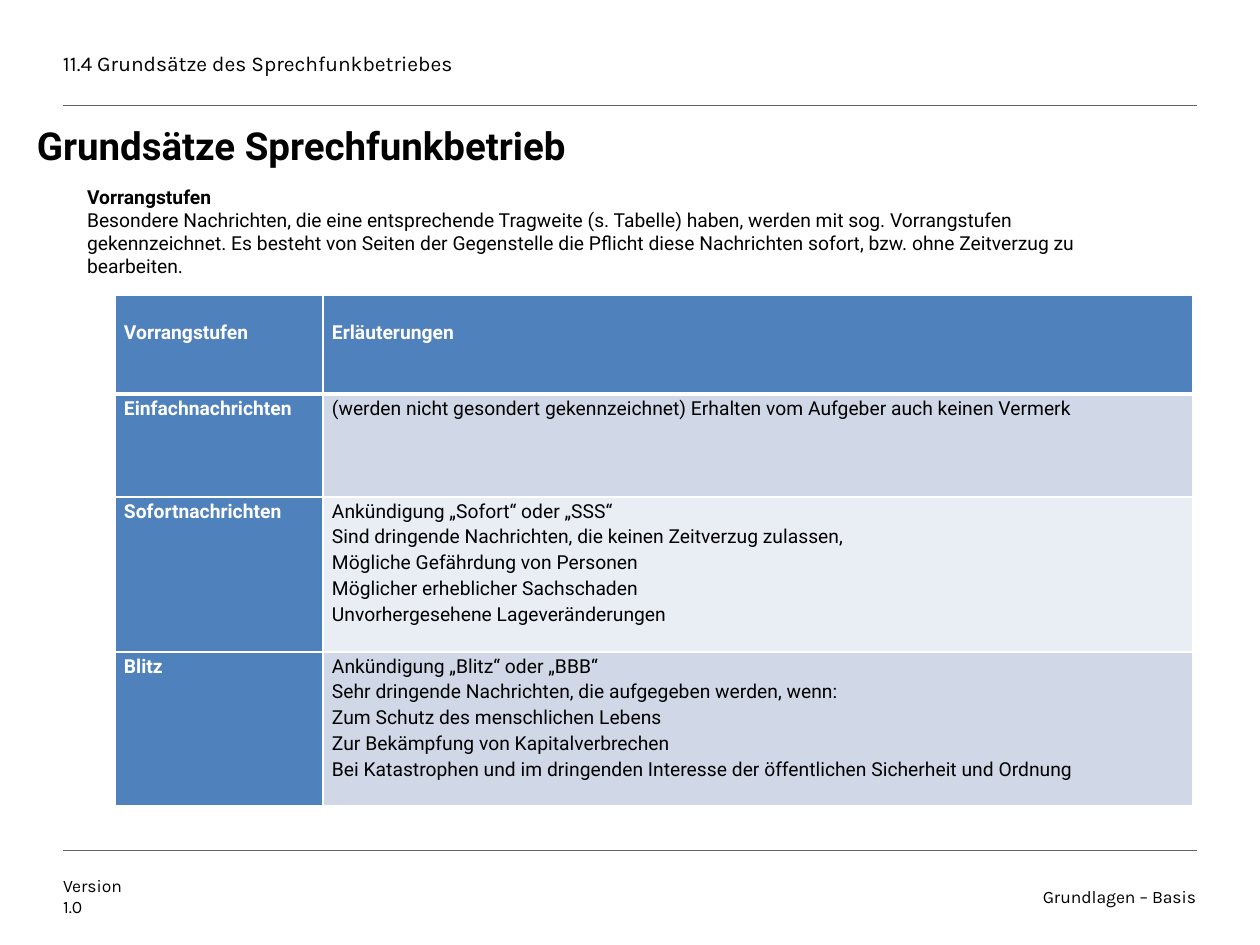
from dataclasses import dataclass

from lxml import etree
from pptx import Presentation
from pptx.dml.color import RGBColor
from pptx.enum.shapes import MSO_CONNECTOR
from pptx.enum.text import MSO_ANCHOR, PP_ALIGN
from pptx.oxml.ns import qn
from pptx.util import Inches, Length, Pt

STRAIGHT = MSO_CONNECTOR.STRAIGHT
TOP, MIDDLE = MSO_ANCHOR.TOP, MSO_ANCHOR.MIDDLE
LEFT, RIGHT = PP_ALIGN.LEFT, PP_ALIGN.RIGHT
PX_PER_INCH = 126


@dataclass(frozen=True)
class Theme:
    frame_font: str = "Karla"
    body_font: str = "Roboto"
    text: str = "000000"
    inverse: str = "FFFFFF"
    rule: str = "646464"
    accent: str = "4F81BD"
    band_dark: str = "D0D8E8"
    band_light: str = "E9EDF4"
    chapter_size: int = 12
    footer_size: int = 10
    title_size: int = 22
    body_size: int = 11
    rule_width: float = 0.25
    border: int = 1
    header_border: int = 3
    title_spacing: int = 24
    cell_spacing: float = 1.15


THEME = Theme()


@dataclass(frozen=True)
class Style:
    font: str
    size: int
    color: str = THEME.text
    bold: bool = False


CHAPTER = Style(THEME.frame_font, THEME.chapter_size)
FOOTER = Style(THEME.frame_font, THEME.footer_size)
TITLE = Style(THEME.body_font, THEME.title_size, bold=True)
BODY = Style(THEME.body_font, THEME.body_size)
BODY_BOLD = Style(THEME.body_font, THEME.body_size, bold=True)
CELL_HEAD = Style(THEME.body_font, THEME.body_size, THEME.inverse, True)


@dataclass(frozen=True)
class TextBlock:
    left: int
    top: int
    width: int
    height: int
    lines: tuple[str, ...]
    styles: tuple[Style, ...]
    anchor: MSO_ANCHOR = MIDDLE
    align: PP_ALIGN = LEFT
    inset_x: int = 0
    inset_y: int = 0
    spacing: Length | None = None


@dataclass(frozen=True)
class PriorityRow:
    height: int
    level: str
    details: tuple[str, ...]
    fill: str
    detail_style: Style = BODY
    inset_top: int = 0


RULE_LEFT, RULE_RIGHT = 63, 1197
RULE_TOPS = (105, 850)

BLOCKS = (
    TextBlock(63, 42, 766, 42, ("11.4 Grundsätze des Sprechfunkbetriebes",), (CHAPTER,)),
    TextBlock(63, 868, 71, 56, ("Version", "1.0"), (FOOTER, FOOTER)),
    TextBlock(1017, 868, 179, 56, ("Grundlagen – Basis",), (FOOTER,), align=RIGHT),
    TextBlock(37, 126, 930, 84, ("Grundsätze Sprechfunkbetrieb",), (TITLE,), TOP,
              spacing=Pt(THEME.title_spacing)),
    TextBlock(74, 179, 1079, 104, (
        "Vorrangstufen",
        "Besondere Nachrichten, die eine entsprechende Tragweite (s. Tabelle) haben, "
        "werden mit sog. Vorrangstufen gekennzeichnet. Es besteht von Seiten der "
        "Gegenstelle die Pflicht diese Nachrichten sofort, bzw. ohne Zeitverzug zu "
        "bearbeiten.",
    ), (BODY_BOLD, BODY), TOP, inset_x=13, inset_y=6),
)

TABLE_LEFT, TABLE_TOP = 115, 295
COLUMN_WIDTHS = (208, 870)
CELL_INSET = 9
PRIORITY_ROWS = (
    PriorityRow(99, "Vorrangstufen", ("Erläuterungen",), THEME.accent, CELL_HEAD, 23),
    PriorityRow(103, "Einfachnachrichten", (
        "(werden nicht gesondert gekennzeichnet) Erhalten vom Aufgeber auch keinen Vermerk",
    ), THEME.band_dark),
    PriorityRow(155, "Sofortnachrichten", (
        "Ankündigung „Sofort“ oder „SSS“",
        "Sind dringende Nachrichten, die keinen Zeitverzug zulassen,",
        "Mögliche Gefährdung von Personen",
        "Möglicher erheblicher Sachschaden",
        "Unvorhergesehene Lageveränderungen",
    ), THEME.band_light),
    PriorityRow(154, "Blitz", (
        "Ankündigung „Blitz“ oder „BBB“",
        "Sehr dringende Nachrichten, die aufgegeben werden, wenn:",
        "Zum Schutz des menschlichen Lebens",
        "Zur Bekämpfung von Kapitalverbrechen",
        "Bei Katastrophen und im dringenden Interesse der öffentlichen Sicherheit und Ordnung",
    ), THEME.band_dark),
)


def px(value: int) -> Length:
    return Inches(value / PX_PER_INCH)


def write_lines(frame, lines, styles, align=LEFT, spacing=None) -> None:
    frame.text = "\n".join(lines)
    for para, style in zip(frame.paragraphs, styles):
        para.alignment = align
        if spacing is not None:
            para.line_spacing = spacing
        for span in para.runs:
            span.font.name = style.font
            span.font.size = Pt(style.size)
            span.font.bold = style.bold
            span.font.color.rgb = RGBColor.from_string(style.color)


def draw_rule(page, top: int) -> None:
    rule = page.shapes.add_connector(STRAIGHT, px(RULE_LEFT), px(top), px(RULE_RIGHT), px(top))
    rule.line.color.rgb = RGBColor.from_string(THEME.rule)
    rule.line.width = Pt(THEME.rule_width)
    etree.SubElement(rule.element.spPr, qn("a:effectLst"))


def draw_block(page, block: TextBlock) -> None:
    box = page.shapes.add_textbox(px(block.left), px(block.top), px(block.width), px(block.height))
    frame = box.text_frame
    frame.word_wrap = True
    frame.vertical_anchor = block.anchor
    frame.margin_left = frame.margin_right = px(block.inset_x)
    frame.margin_top = frame.margin_bottom = px(block.inset_y)
    write_lines(frame, block.lines, block.styles, block.align, block.spacing)


def set_borders(cell, top: int, bottom: int) -> None:
    """Add borders of the given point widths; must run before the cell is filled."""
    properties = cell._tc.get_or_add_tcPr()
    widths = {"L": THEME.border, "R": THEME.border, "T": top, "B": bottom}
    for side, width in widths.items():
        line = etree.SubElement(properties, qn(f"a:ln{side}"), w=str(Pt(width)))
        fill = etree.SubElement(line, qn("a:solidFill"))
        etree.SubElement(fill, qn("a:srgbClr"), val=THEME.inverse)


def draw_table(page, rows: tuple[PriorityRow, ...]) -> None:
    table = page.shapes.add_table(
        len(rows), len(COLUMN_WIDTHS), px(TABLE_LEFT), px(TABLE_TOP),
        px(sum(COLUMN_WIDTHS)), px(sum(row.height for row in rows)),
    ).table
    table.horz_banding = False
    for column, width in zip(table.columns, COLUMN_WIDTHS):
        column.width = px(width)
    for index, row in enumerate(rows):
        table.rows[index].height = px(row.height)
        contents = (((row.level,), CELL_HEAD, THEME.accent),
                    (row.details, row.detail_style, row.fill))
        for column, (lines, style, fill) in enumerate(contents):
            cell = table.cell(index, column)
            set_borders(cell,
                        THEME.header_border if index == 1 else THEME.border,
                        THEME.header_border if index == 0 else THEME.border)
            cell.fill.solid()
            cell.fill.fore_color.rgb = RGBColor.from_string(fill)
            cell.margin_left = cell.margin_right = px(CELL_INSET)
            cell.margin_top, cell.margin_bottom = px(row.inset_top), 0
            write_lines(cell.text_frame, lines, (style,) * len(lines),
                        spacing=THEME.cell_spacing)


def main() -> None:
    deck = Presentation()
    deck.slide_width, deck.slide_height = px(1260), px(945)
    page = deck.slides.add_slide(deck.slide_layouts[6])
    for top in RULE_TOPS:
        draw_rule(page, top)
    for block in BLOCKS:
        draw_block(page, block)
    draw_table(page, PRIORITY_ROWS)
    deck.save("out.pptx")


if __name__ == "__main__":
    main()
